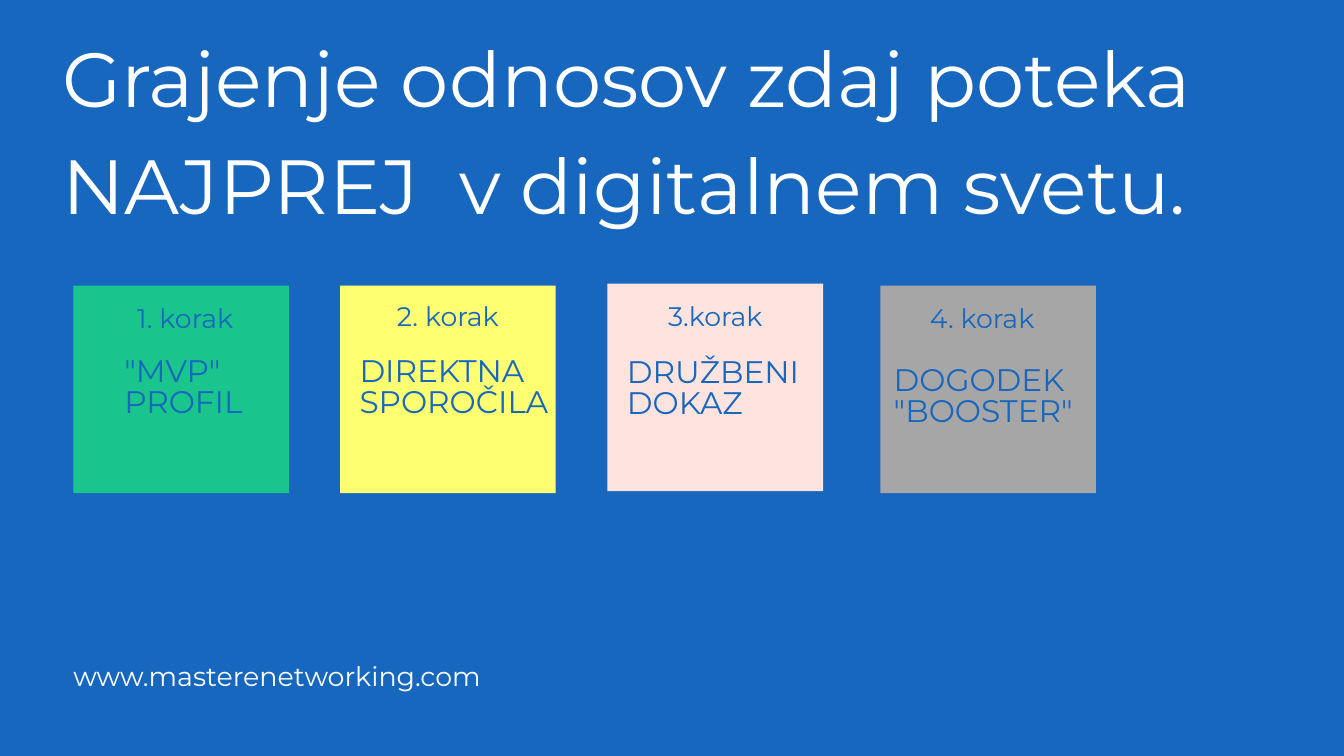
import pptx
import pptx.dml.color
import pptx.enum.shapes
import pptx.enum.text
import pptx.util

THEME = {
    "font": "Montserrat",
    "blue": "1867BE",
    "white": "FFFFFF",
    "green": "19C48D",
    "yellow": "FFFF72",
    "pink": "FFE3DE",
    "grey": "A6A6A6",
    "title": (82.2, 115),
    "website": (28.8, 40.3),
    "step": (28.7, 28.7),
    "action": (33.4, 33.4),
}
LEFT = pptx.enum.text.PP_ALIGN.LEFT
CENTER = pptx.enum.text.PP_ALIGN.CENTER

presentation = pptx.Presentation()
presentation.slide_width = pptx.util.Inches(20)
presentation.slide_height = pptx.util.Inches(11.25)
COLUMN = presentation.slide_width / 20
ROW = presentation.slide_height / 11.25

slide = presentation.slides.add_slide(presentation.slide_layouts[6])
slide.background.fill.solid()
slide.background.fill.fore_color.rgb = pptx.dml.color.RGBColor.from_string(THEME["blue"])


def place(left, top, width, height):
    return int(left * COLUMN), int(top * ROW), int(width * COLUMN), int(height * ROW)


def add_text(wording, area, style, color, alignment=LEFT):
    size, leading = THEME[style]
    frame = slide.shapes.add_textbox(*place(*area)).text_frame
    frame.margin_left = frame.margin_top = frame.margin_right = frame.margin_bottom = 0
    frame.word_wrap = True
    frame.text = wording
    for paragraph in frame.paragraphs:
        paragraph.alignment = alignment
        paragraph.line_spacing = pptx.util.Pt(leading)
        for run in paragraph.runs:
            run.font.name = THEME["font"]
            run.font.size = pptx.util.Pt(size)
            run.font.color.rgb = pptx.dml.color.RGBColor.from_string(THEME[color])


add_text("Grajenje odnosov zdaj poteka NAJPREJ  v digitalnem svetu.",
         (0.93, 0.23, 18.27, 3.13), "title", "white")
add_text("www.masterenetworking.com", (1.09, 9.74, 14.69, 0.53), "website", "white")

steps = [
    ("green", (1.09, 4.25), "1. korak", (1.44, 4.57), '"MVP"\nPROFIL', (1.85, 5.32), 2.63),
    ("yellow", (5.06, 4.25), "2. korak", (5.35, 4.54), "DIREKTNA SPOROČILA", (5.35, 5.32), 3.45),
    ("pink", (9.04, 4.22), "3.korak", (9.33, 4.54), "DRUŽBENI DOKAZ", (9.33, 5.34), 2.6),
    ("grey", (13.1, 4.25), "4. korak", (13.3, 4.57), 'DOGODEK "BOOSTER"', (13.3, 5.45), 2.87),
]
for color, card_corner, step, step_corner, action, action_corner, action_width in steps:
    card = slide.shapes.add_shape(
        pptx.enum.shapes.MSO_SHAPE.RECTANGLE, *place(*card_corner, 3.21, 3.09))
    card.shadow.inherit = False
    card.fill.solid()
    card.fill.fore_color.rgb = pptx.dml.color.RGBColor.from_string(THEME[color])
    card.line.fill.background()
    add_text(action, (*action_corner, action_width, 0.96), "action", "blue")
    add_text(step, (*step_corner, 2.63, 0.43), "step", "blue", CENTER)

presentation.save("out.pptx")
